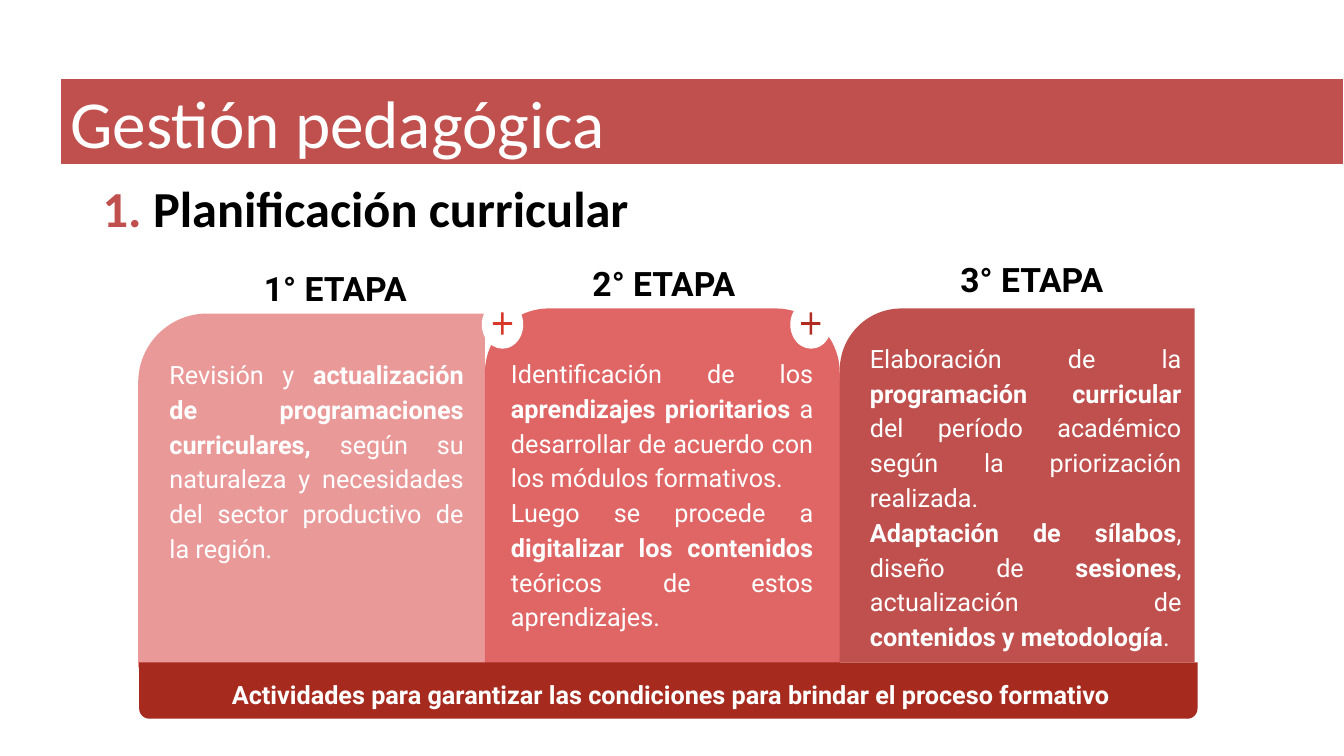
from lxml import etree
from pptx import Presentation
from pptx import util as u
from pptx.dml.color import RGBColor
from pptx.enum import shapes, text
from pptx.oxml.ns import qn

COLORS = {
    "white": "FFFFFF", "black": "000000", "brick": "C0504D",
    "pink": "EA9999", "coral": "E06666", "bar": "A72A1E",
    "plus 1": "D83829", "plus 2": "B02C20",
}
KIND = shapes.MSO_SHAPE
ALIGN = text.PP_ALIGN

deck = Presentation()
deck.slide_width, deck.slide_height = u.Inches(13.33), u.Inches(7.5)
slide = deck.slides.add_slide(deck.slide_layouts[6])


def draw(kind, bounds, color, adjust=(), flip=False, rotation=0):
    """Draw a filled shape; bounds are percentages of the slide's size."""
    sizes = (deck.slide_width, deck.slide_height) * 2
    shape = slide.shapes.add_shape(
        kind, *(int(size * share / 100) for size, share in zip(sizes, bounds)))
    shape.shadow.inherit = False
    if color:
        shape.fill.solid()
        shape.fill.fore_color.rgb = RGBColor.from_string(COLORS[color])
    else:
        shape.fill.background()
    shape.line.fill.background()
    for index, value in enumerate(adjust):
        shape.adjustments[index] = value
    if flip:
        shape._element.spPr.find(qn("a:xfrm")).set("flipH", "1")
    shape.rotation = rotation
    return shape


def write(bounds, *paragraphs, size=18, font="Roboto", color="white", bold=False,
          align=ALIGN.LEFT, spacing=1.0, inset=(0.13, 0.13), fill=None,
          anchor=text.MSO_ANCHOR.TOP):
    """Write paragraphs; asterisks enclose the words that switch to bold."""
    box = draw(KIND.RECTANGLE, bounds, fill)
    frame = box.text_frame
    frame.word_wrap = True
    frame.vertical_anchor = anchor
    frame.margin_left = frame.margin_right = u.Inches(inset[0])
    frame.margin_top = frame.margin_bottom = u.Inches(inset[1])
    for index, content in enumerate(paragraphs):
        paragraph = frame.add_paragraph() if index else frame.paragraphs[0]
        paragraph.alignment = align
        paragraph.line_spacing = spacing
        for part, words in enumerate(content.split("*")):
            if words:
                run = paragraph.add_run()
                run.text = words
                run.font.size = u.Pt(size)
                run.font.name = font
                run.font.bold = bold or part % 2 == 1
                run.font.color.rgb = RGBColor.from_string(COLORS[color])
    return box


# Title band
title = write((4.5, 10.4, 95.5, 11.33), "Gestión pedagógica", size=48,
              font="Calibri", inset=(0.1, 0.05), fill="brick",
              anchor=text.MSO_ANCHOR.MIDDLE)
title.line.color.rgb = RGBColor.from_string(COLORS["white"])
title.line.width = u.Pt(0.75)

# Numbered heading
heading = write((6.9, 22.13, 62.93, 8.53), "Planificación curricular", size=36,
                font="Calibri", color="black", bold=True, inset=(0.1, 0.1))
numbering = heading.text_frame.paragraphs[0]._p.get_or_add_pPr()
numbering.set("marL", str(u.Inches(0.5)))
numbering.set("indent", str(u.Inches(-0.5)))
number_color = etree.SubElement(numbering, qn("a:buClr"))
etree.SubElement(number_color, qn("a:srgbClr"), val=COLORS["brick"])
etree.SubElement(numbering, qn("a:buAutoNum"), type="arabicPeriod")

# Stage cards
draw(KIND.ROUND_1_RECTANGLE, (10.28, 41.47, 25.8, 46.8), "pink", [0.199], flip=True)
draw(KIND.ROUND_2_SAME_RECTANGLE, (36.08, 40.8, 26.4, 47.47), "coral", [0.181, 0])
draw(KIND.ROUND_1_RECTANGLE, (62.48, 40.8, 26.4, 46.8), "brick", [0.174], flip=True)

# Stage labels and descriptions
stages = [
    ((14.03, 33.73), (11.63, 45.2, 23.85, 43.07), "pink", [
        "Revisión y *actualización de programaciones curriculares, *según su "
        "naturaleza y necesidades del sector productivo de la región."]),
    ((38.48, 33.07), (37.05, 45.07, 24.45, 42.13), None, [
        "Identificación de los *aprendizajes prioritarios* a desarrollar de "
        "acuerdo con los módulos formativos.",
        "Luego se procede a *digitalizar los contenidos *teóricos de estos "
        "aprendizajes."]),
    ((65.85, 32.53), (63.75, 43.07, 25.13, 43.07), None, [
        "Elaboración de la *programación curricular* del período académico "
        "según la priorización realizada.",
        "*Adaptación de sílabos*, diseño de *sesiones*, actualización de "
        "*contenidos y metodología*."]),
]
for number, (corner, bounds, fill, description) in enumerate(stages, 1):
    write((*corner, 21.83, 8.53), f"{number}° ETAPA", size=24, color="black",
          bold=True, align=ALIGN.CENTER)
    write(bounds, *description, align=ALIGN.JUSTIFY, spacing=1.15, fill=fill)

# Plus signs between the stages
for left, color in ((35.85, "plus 1"), (58.8, "plus 2")):
    draw(KIND.OVAL, (left, 39.73, 3.08, 6.4), "white")
    draw(KIND.MATH_PLUS, (left + 0.56, 40.8, 1.95, 4), color, [0.099])

# Closing bar
draw(KIND.ROUND_2_SAME_RECTANGLE, (10.35, 87.6, 78.75, 7.47), "bar", [0.181, 0],
     rotation=180)
write((10.95, 88.13, 77.93, 4.13),
      "Actividades para garantizar las condiciones para brindar el proceso formativo",
      bold=True, align=ALIGN.CENTER)

deck.save("out.pptx")
